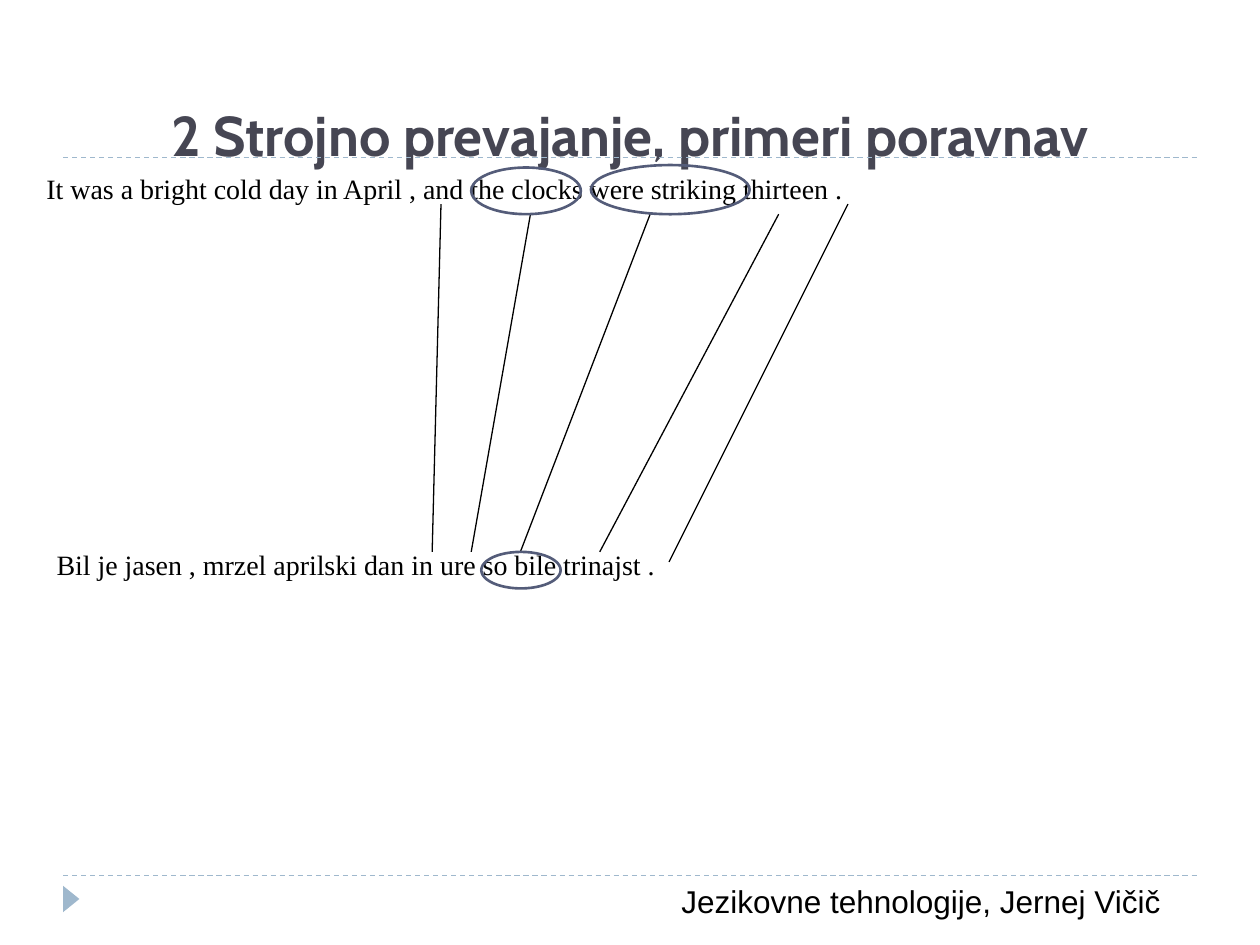
from pptx import Presentation
from pptx.dml.color import RGBColor
from pptx.enum.dml import MSO_LINE
from pptx.enum.shapes import MSO_CONNECTOR, MSO_SHAPE
from pptx.enum.text import MSO_ANCHOR, MSO_AUTO_SIZE, PP_ALIGN
from pptx.oxml.ns import qn
from pptx.util import Inches, Pt
from lxml.etree import SubElement

COLORS = {"ink": "000000", "title": "464653", "accent": "9FB8CD", "ring": "545C79"}
COLUMNS, ROWS = 100, 75


class AlignmentSlide:
    """Places elements on a grid of COLUMNS by ROWS."""

    def __init__(self, deck):
        self.cell_width = deck.slide_width / COLUMNS
        self.cell_height = deck.slide_height / ROWS
        self.slide = deck.slides.add_slide(deck.slide_layouts[5])
        self.shapes = self.slide.shapes

    def grid(self, *lengths):
        """Turn alternating columns and rows into slide lengths."""
        cells = (self.cell_width, self.cell_height)
        return [round(length * cells[i % 2]) for i, length in enumerate(lengths)]

    def color(self, name):
        return RGBColor.from_string(COLORS[name])

    def format_font(self, paragraph, family, size, color, bold=False):
        font = paragraph.font
        font.name, font.size, font.bold = family, Pt(size), bold
        font.color.rgb = self.color(color)

    def title(self, wording, *box):
        title = self.shapes.title
        title.left, title.top, title.width, title.height = self.grid(*box)
        frame = title.text_frame
        frame.text = wording
        frame.auto_size = MSO_AUTO_SIZE.NONE
        frame.vertical_anchor = MSO_ANCHOR.BOTTOM
        paragraph = frame.paragraphs[0]
        paragraph.alignment = PP_ALIGN.LEFT
        self.format_font(paragraph, "Cabin", 32, "title", bold=True)

    def text(self, wording, *box, family="Times New Roman", size=16, wrap=True):
        frame = self.shapes.add_textbox(*self.grid(*box)).text_frame
        frame.text = wording
        frame.word_wrap = wrap
        frame.auto_size = MSO_AUTO_SIZE.SHAPE_TO_FIT_TEXT
        self.format_font(frame.paragraphs[0], family, size, "ink")
        return frame.paragraphs[0]

    def sentence(self, wording, *box):
        """Add a text line with a hanging indent."""
        properties = self.text(wording, *box)._p.get_or_add_pPr()
        properties.set("marL", str(Inches(0.5)))
        properties.set("indent", str(-Inches(0.5)))

    def line(self, *ends, color="ink", dash=None):
        connector = self.shapes.add_connector(MSO_CONNECTOR.STRAIGHT, *self.grid(*ends))
        connector.line.color.rgb = self.color(color)
        connector.line.width = Pt(0.75)
        if dash:
            connector.line.dash_style = dash
        SubElement(connector._element.spPr, qn("a:effectLst"))

    def ring(self, *box):
        oval = self.shapes.add_shape(MSO_SHAPE.OVAL, *self.grid(*box))
        oval.shadow.inherit = False
        oval.fill.background()
        oval.line.color.rgb = self.color("ring")
        oval.line.width = Pt(1.5)

    def marker(self, *box):
        triangle = self.shapes.add_shape(MSO_SHAPE.ISOSCELES_TRIANGLE, *self.grid(*box))
        triangle.rotation = 90
        triangle.shadow.inherit = False
        triangle.fill.solid()
        triangle.fill.fore_color.rgb = self.color("accent")
        triangle.line.fill.background()


def main():
    deck = Presentation()
    deck.slide_width, deck.slide_height = Inches(10), Inches(7.5)
    page = AlignmentSlide(deck)

    for row in (69.5, 12.5):
        page.line(5, row, 95, row, color="accent", dash=MSO_LINE.DASH)
    page.marker(4.6, 70.7, 2.1, 1.3)
    page.text("Jezikovne tehnologije, Jernej Vičič", 53.1, 69.5, 40.4, 4,
              family="Arial", size=18, wrap=False)

    page.sentence("It was a bright cold day in April , and the clocks were striking thirteen .",
                  2.7, 13.1, 92.9, 3.7)
    page.sentence("Bil je jasen , mrzel aprilski dan in ure so bile trinajst .",
                  3.5, 43, 92.9, 3.7)

    word_links = [
        (35, 16.2, 34.3, 43.8),    # and – in
        (42.1, 17, 37.4, 43.8),    # the clocks – ure
        (51.6, 17, 41.3, 43.8),    # were striking – so bile
        (61.8, 17, 47.6, 43.8),    # thirteen – trinajst
        (67.3, 16.2, 53.1, 44.6),  # full stops
    ]
    for ends in word_links:
        page.line(*ends)

    phrase_rings = [
        (37.4, 13.3, 8.7, 3.7),   # the clocks
        (46.9, 13.1, 12.6, 3.9),  # were striking
        (38.2, 43.8, 6.3, 2.9),   # so bile
    ]
    for box in phrase_rings:
        page.ring(*box)

    page.title("2 Strojno prevajanje, primeri poravnav", 12.6, 2.3, 85.2, 11.5)
    deck.save("out.pptx")


if __name__ == "__main__":
    main()
